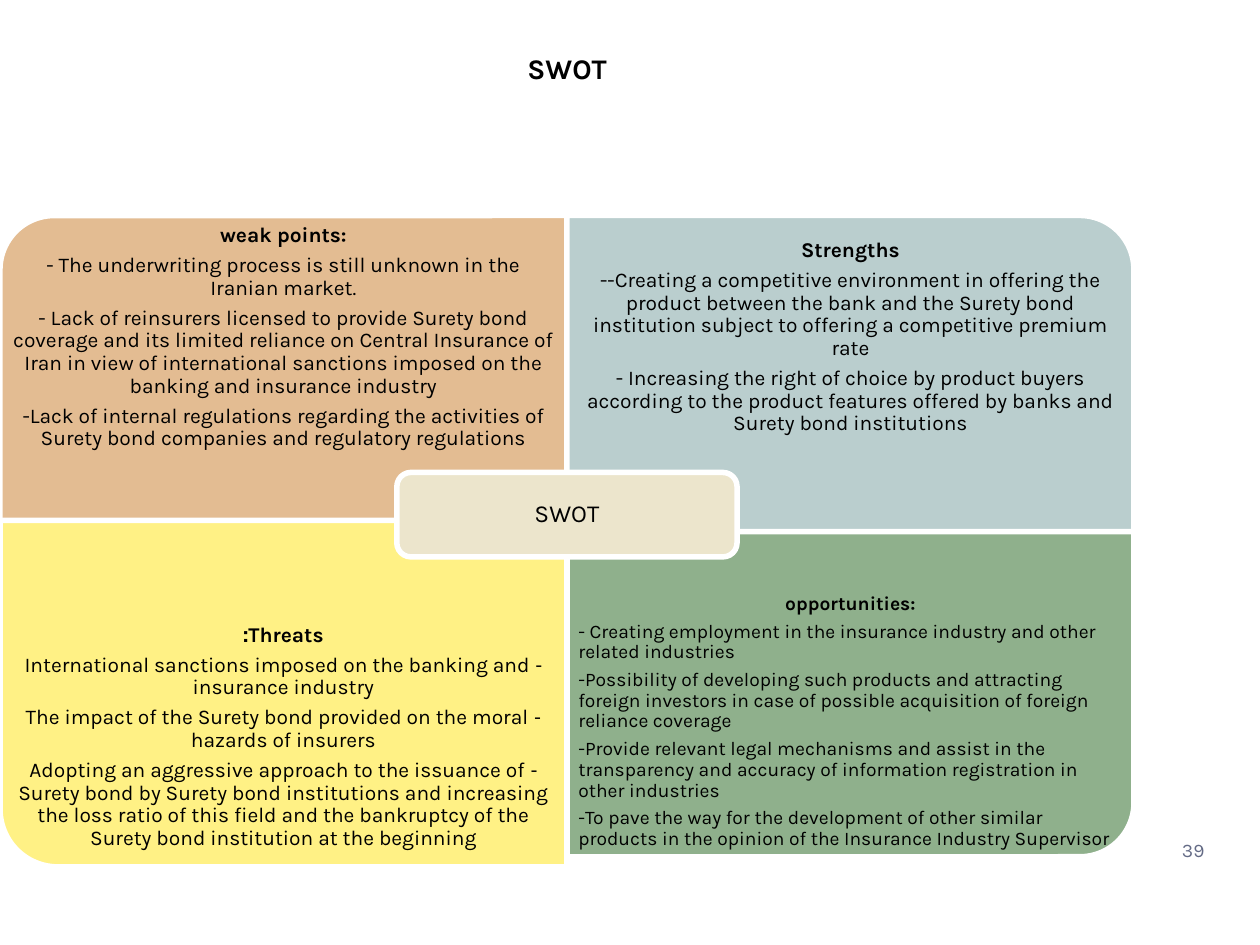
from dataclasses import dataclass

from pptx import Presentation
from pptx import util as u
from pptx.dml.color import RGBColor
from pptx.enum import shapes, text

WIDTH, HEIGHT = 10, 7.5
COLUMN = 0.45 * WIDTH
TOP_ROW = 1.71
QUADRANT_HEIGHT = 2.58
BOTTOM_EDGE = 6.8
TEXT_SHARE = 0.75
FONT = "Karla"
BLACK, WHITE = "000000", "FFFFFF"
CENTER, LEFT, RIGHT = text.PP_ALIGN.CENTER, text.PP_ALIGN.LEFT, text.PP_ALIGN.RIGHT
MIDDLE, BOTTOM = text.MSO_ANCHOR.MIDDLE, text.MSO_ANCHOR.BOTTOM


@dataclass
class Box:
    left: float
    top: float
    width: float
    height: float

    def lengths(self):
        return [u.Inches(v) for v in (self.left, self.top, self.width, self.height)]


@dataclass
class Quadrant:
    column: int
    top: float
    height: float
    rotation: int
    fill: str
    heading: str
    points: list[str]
    size: float = 12
    align: text.PP_ALIGN = CENTER
    rtl: bool = False
    bottom_inset: float = 0.09


QUADRANTS = [
    Quadrant(0, TOP_ROW, QUADRANT_HEIGHT, 270, "E3BC92", "weak points:", [
        "- The underwriting process is still unknown in the Iranian market.",
        "- Lack of reinsurers licensed to provide Surety bond coverage and its limited reliance on "
        "Central Insurance of Iran in view of international sanctions imposed on the banking and "
        "insurance industry",
        "-Lack of internal regulations regarding the activities of Surety bond companies and "
        "regulatory regulations",
    ]),
    Quadrant(1, TOP_ROW, QUADRANT_HEIGHT, 0, "BACECE", "Strengths", [
        "--Creating a competitive environment in offering the product between the bank and the "
        "Surety bond institution subject to offering a competitive premium rate",
        "- Increasing the right of choice by product buyers according to the product features "
        "offered by banks and Surety bond institutions",
    ]),
    Quadrant(0, 4.13, 2.75, 180, "FFF185", "Threats:", [
        "- International sanctions imposed on the banking and insurance industry",
        "- The impact of the Surety bond provided on the moral hazards of insurers",
        "- Adopting an aggressive approach to the issuance of Surety bond by Surety bond "
        "institutions and increasing the loss ratio of this field and the bankruptcy of the "
        "Surety bond institution at the beginning",
    ], rtl=True),
    Quadrant(1, BOTTOM_EDGE - QUADRANT_HEIGHT, QUADRANT_HEIGHT, 90, "8FB08C", "opportunities:", [
        "- Creating employment in the insurance industry and other related industries",
        "-Possibility of developing such products and attracting foreign investors in case of "
        "possible acquisition of foreign reliance coverage",
        "-Provide relevant legal mechanisms and assist in the transparency and accuracy of "
        "information registration in other industries",
        "-To pave the way for the development of other similar products in the opinion of the "
        "Insurance Industry Supervisor",
    ], size=11, align=LEFT, bottom_inset=0.3),
]


def colour(value: str) -> RGBColor:
    return RGBColor.from_string(value)


def set_frame(frame, anchor, insets) -> None:
    frame.word_wrap = True
    frame.auto_size = text.MSO_AUTO_SIZE.NONE
    frame.vertical_anchor = anchor
    frame.margin_left, frame.margin_top, frame.margin_right, frame.margin_bottom = (
        u.Inches(inset) for inset in insets)


def format_paragraph(paragraph, size, align=CENTER, bold=False, shade=BLACK, rtl=False) -> None:
    paragraph.alignment = align
    if rtl:
        paragraph._p.get_or_add_pPr().set("rtl", "1")
    for run in paragraph.runs:
        run.font.name = FONT
        run.font.size = u.Pt(size)
        run.font.bold = bold
        run.font.color.rgb = colour(shade)


def tighten(paragraph, size: float) -> None:
    paragraph.line_spacing = 0.9
    paragraph.space_after = u.Pt(0.35 * size)


def add_panel(slide, kind, box: Box, fill: str, rotation: int = 0) -> None:
    if rotation % 180:
        box = Box(box.left + (box.width - box.height) / 2,
                  box.top + (box.height - box.width) / 2, box.height, box.width)
    panel = slide.shapes.add_shape(kind, *box.lengths())
    panel.rotation = rotation
    panel.shadow.inherit = False
    panel.fill.solid()
    panel.fill.fore_color.rgb = colour(fill)
    panel.line.color.rgb = colour(WHITE)
    panel.line.width = u.Pt(3.15)


def add_text(slide, box: Box, words: str, anchor, insets):
    frame = slide.shapes.add_textbox(*box.lengths()).text_frame
    set_frame(frame, anchor, insets)
    frame.text = words
    return frame.paragraphs


def add_quadrant(slide, quadrant: Quadrant) -> None:
    left = quadrant.column * COLUMN
    add_panel(slide, shapes.MSO_SHAPE.ROUND_1_RECTANGLE,
              Box(left, quadrant.top, COLUMN, quadrant.height), quadrant.fill, quadrant.rotation)
    text_height = TEXT_SHARE * quadrant.height
    text_top = quadrant.top
    if quadrant.top > TOP_ROW:
        text_top += quadrant.height - text_height
    paragraphs = add_text(slide, Box(left, text_top, COLUMN, text_height),
                          "\n".join([quadrant.heading, *quadrant.points]), MIDDLE,
                          (0.09, 0.09, 0.09, quadrant.bottom_inset))
    for index, paragraph in enumerate(paragraphs):
        heading = index == 0
        tighten(paragraph, quadrant.size)
        format_paragraph(paragraph, quadrant.size, CENTER if heading else quadrant.align,
                         bold=heading, rtl=quadrant.rtl)


def add_title(slide) -> None:
    title = slide.shapes.title
    title.left, title.top, title.width, title.height = Box(0.54, 0.33, 7.92, 0.92).lengths()
    set_frame(title.text_frame, BOTTOM, (0.05, 0, 0.05, 0.57))
    title.text_frame.text = "SWOT"
    format_paragraph(title.text_frame.paragraphs[0], 16.2, bold=True, rtl=True)


def add_hub(slide) -> None:
    hub = Box(0.7 * COLUMN, 0.5 * HEIGHT, 0.6 * COLUMN, 0.67)
    add_panel(slide, shapes.MSO_SHAPE.ROUNDED_RECTANGLE, hub, "ECE5CC")
    label = add_text(slide, hub, "SWOT", MIDDLE, [0.09] * 4)[0]
    tighten(label, 14)
    format_paragraph(label, 14)


def main() -> None:
    deck = Presentation()
    deck.slide_width, deck.slide_height = u.Inches(WIDTH), u.Inches(HEIGHT)
    slide = deck.slides.add_slide(deck.slide_layouts[5])
    add_title(slide)
    for quadrant in QUADRANTS:
        add_quadrant(slide, quadrant)
    add_hub(slide)
    page_number = add_text(slide, Box(8.89, 6.27, 0.67, 0.57), "39", BOTTOM, [0] * 4)[0]
    format_paragraph(page_number, 11, RIGHT, shade="646B86")
    deck.save("out.pptx")


if __name__ == "__main__":
    main()
